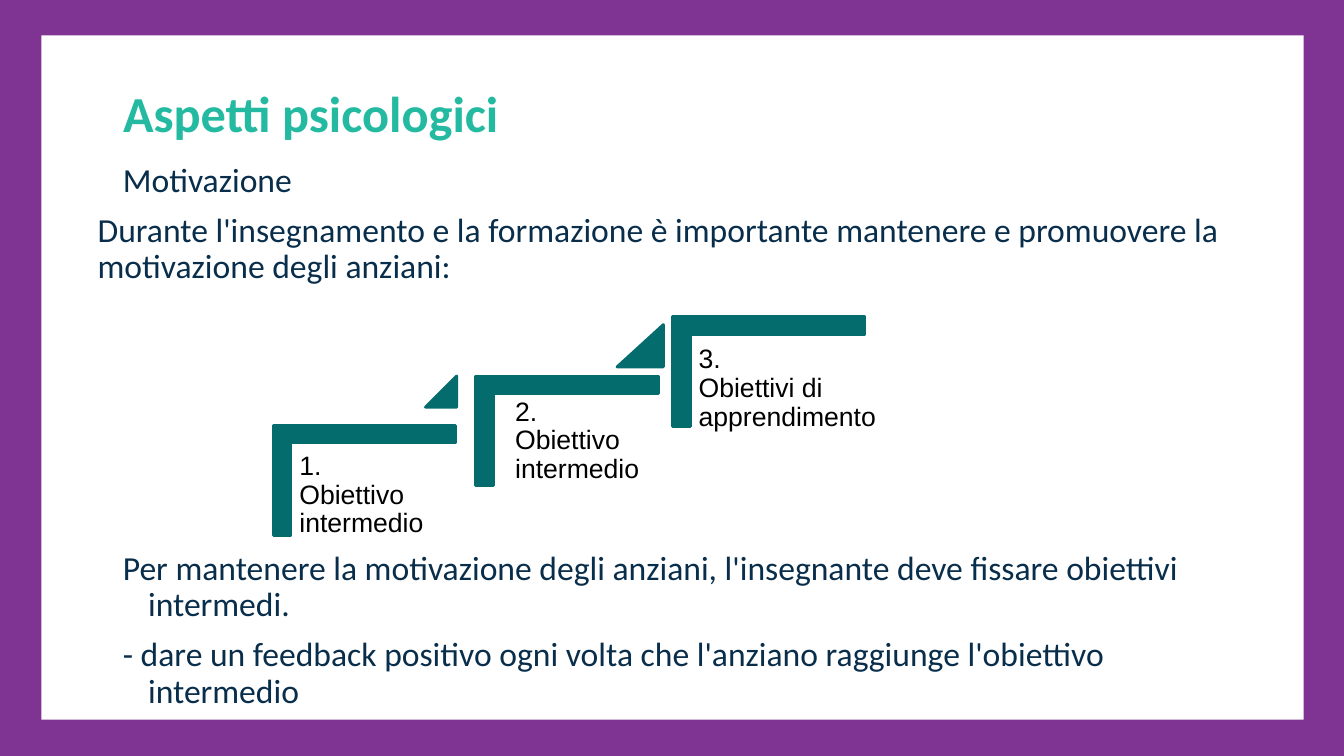
from pptx import Presentation
from pptx.dml.color import RGBColor
from pptx.enum import shapes, text
from pptx.util import Inches, Pt

COLORS = {"frame": "7F3494", "panel": "FFFFFF", "title": "24BAA2",
          "body": "092E4B", "step": "056C6E", "label": "000000"}
STEP_HEIGHT = 1.09
BAR_RATIO = 0.161


def fill_shape(shape, color, line_width=0):
    """Give a shape a flat fill and an outline of the same colour, or none."""
    shape.shadow.inherit = False
    shape.fill.solid()
    shape.fill.fore_color.rgb = RGBColor.from_string(COLORS[color])
    if line_width:
        shape.line.color.rgb = RGBColor.from_string(COLORS[color])
        shape.line.width = Pt(line_width)
    else:
        shape.line.fill.background()


def write_paragraphs(shape, lines, size, color, font="Calibri", bold=False,
                     space=10, hanging=(), inset=(0.1, 0.05)):
    """Fill a shape with paragraphs, hanging those whose index is listed."""
    frame = shape.text_frame
    frame.word_wrap = True
    frame.auto_size = text.MSO_AUTO_SIZE.NONE
    frame.vertical_anchor = text.MSO_ANCHOR.TOP
    frame.margin_left = frame.margin_right = Inches(inset[0])
    frame.margin_top = frame.margin_bottom = Inches(inset[1])
    for index, line in enumerate(lines):
        paragraph = frame.add_paragraph() if index else frame.paragraphs[0]
        paragraph.alignment = text.PP_ALIGN.LEFT
        paragraph.line_spacing = 0.9
        paragraph.space_before = Pt(space)
        if index in hanging:
            properties = paragraph._p.get_or_add_pPr()
            properties.set("marL", str(Inches(0.5)))
            properties.set("indent", str(Inches(-0.25)))
        run = paragraph.add_run()
        run.text = line
        run.font.name = font
        run.font.size = Pt(size)
        run.font.bold = bold
        run.font.color.rgb = RGBColor.from_string(COLORS[color])


def add_frame(slide, boxes):
    """Place the coloured border and the panel behind everything else."""
    for index, (color, box) in enumerate(boxes):
        shape = slide.shapes.add_shape(shapes.MSO_SHAPE.RECTANGLE, *map(Inches, box))
        fill_shape(shape, color)
        shape.element.getparent().insert(2 + index, shape.element)


def add_title(slide, box, title):
    """Move and format the title placeholder."""
    shape = slide.shapes.title
    shape.left, shape.top, shape.width, shape.height = map(Inches, box)
    write_paragraphs(shape, [title], 36, "title", bold=True, hanging=(0,))


def add_body(slide, box, lines, hanging):
    """Add a block of body text."""
    shape = slide.shapes.add_textbox(*map(Inches, box))
    write_paragraphs(shape, lines, 24, "body", hanging=hanging)


def add_step(slide, left, top, width, label_box, label):
    """Add one stair step, with its label placed relative to the corner."""
    shift = (width - STEP_HEIGHT) / 2
    corner = slide.shapes.add_shape(
        shapes.MSO_SHAPE.CORNER, Inches(left + shift), Inches(top - shift),
        Inches(STEP_HEIGHT), Inches(width))
    corner.rotation = 90
    corner.adjustments[0] = corner.adjustments[1] = BAR_RATIO
    fill_shape(corner, "step", 2)
    dx, dy, label_width = label_box
    shape = slide.shapes.add_textbox(Inches(left + dx), Inches(top + dy),
                                     Inches(label_width), Inches(1.43))
    write_paragraphs(shape, label, 19, "label", font="Arial", space=0,
                     inset=(0.08, 0.08))


def add_rise(slide, box):
    """Add the triangle that leads up to the next step."""
    shape = slide.shapes.add_shape(shapes.MSO_SHAPE.ISOSCELES_TRIANGLE,
                                   *map(Inches, box))
    shape.adjustments[0] = 1
    fill_shape(shape, "step", 2)


def add_stairs(slide, left, top):
    """Draw the three goals as stairs from the left top corner of their area."""
    intermediate = "Obiettivo intermedio"
    steps = [
        (0, 1.08, 1.81, (0.18, 0.19, 1.64), ["1.", intermediate]),
        (2.01, 0.59, 1.81, (0.31, 0.14, 1.64), ["2.", intermediate]),
        (3.96, 0, 1.91, (0.18, 0.21, 2.25), ["3.", "Obiettivi di apprendimento"]),
    ]
    for x, y, width, label_box, label in steps:
        add_step(slide, left + x, top + y, width, label_box, label)
    for x, y, width, height in [(1.51, 0.59, 0.31, 0.31), (3.41, 0.08, 0.46, 0.42)]:
        add_rise(slide, (left + x, top + y, width, height))


def main():
    """Build the slide and save it."""
    presentation = Presentation()
    presentation.slide_width = Inches(13.33)
    presentation.slide_height = Inches(7.5)
    slide = presentation.slides.add_slide(presentation.slide_layouts[5])
    add_frame(slide, [("frame", (0, 0, 13.33, 7.5)),
                      ("panel", (0.41, 0.35, 12.52, 6.79))])
    add_title(slide, (0.87, 0.83, 11.59, 0.88), "Aspetti psicologici")
    add_body(slide, (0.87, 1.57, 11.59, 1.4), [
        "Motivazione",
        "Durante l'insegnamento e la formazione è importante mantenere e "
        "promuovere la motivazione degli anziani:"], hanging=(0,))
    add_stairs(slide, 2.71, 3.14)
    add_body(slide, (0.87, 5.42, 11.59, 1.7), [
        "Per mantenere la motivazione degli anziani, l'insegnante deve "
        "fissare obiettivi intermedi.",
        "- dare un feedback positivo ogni volta che l'anziano raggiunge "
        "l'obiettivo intermedio"], hanging=(0, 1))
    presentation.save("out.pptx")


if __name__ == "__main__":
    main()
